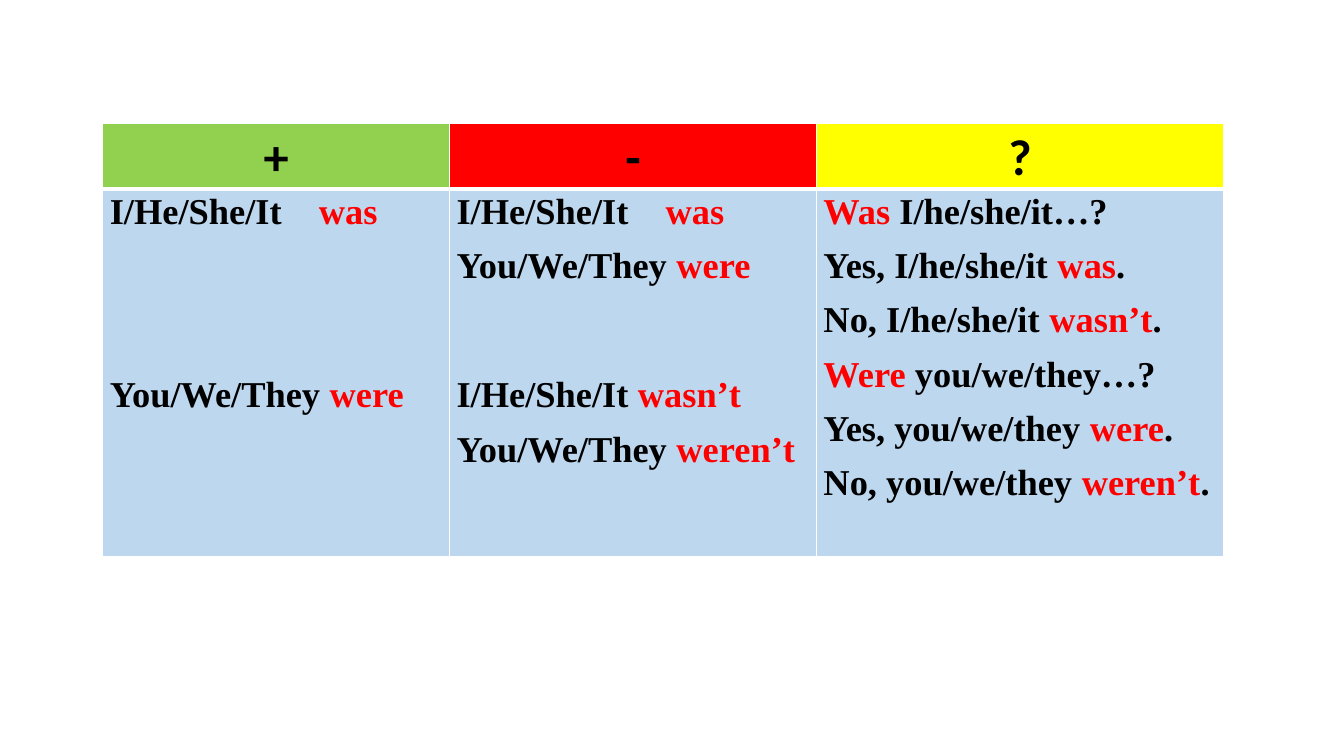
import dataclasses

import lxml.etree
import pptx
import pptx.dml.color
import pptx.enum.text
import pptx.oxml.ns
import pptx.util

WIDE = pptx.util.Inches(13.33)
HIGH = pptx.util.Inches(7.5)
LEFT, TOP = 7.65, 16.27
COLS = [25.8, 27.3, 30.3]
ROWS = [8.67, 48.67]
INK, RED, WHITE, BLUE = "000000", "FF0000", "FFFFFF", "BDD7EE"
TAB = 15.55
HEAD = {"name": "Calibri", "size": pptx.util.Pt(36), "bold": True}
BODY = {"name": "Times New Roman", "size": pptx.util.Pt(26), "bold": True}
INSET = {
    "margin_left": pptx.util.Inches(0.07),
    "margin_right": pptx.util.Inches(0.07),
    "margin_top": 0,
    "margin_bottom": 0,
}


@dataclasses.dataclass
class Line:
    text: str
    after: float = 8
    before: float = 0


@dataclasses.dataclass
class Column:
    sign: str
    fill: str
    lines: list[Line]


TENSES = [
    Column("+", "92D050", [
        Line("I/He/She/It\t*was*"),
        Line("You/We/They *were*", 0, 92.4),
    ]),
    Column("-", RED, [
        Line("I/He/She/It\t*was*"),
        Line("You/We/They *were*", 0),
        Line("I/He/She/It *wasn’t*", 8, 61.6),
        Line("You/We/They *weren’t*"),
    ]),
    Column("?", "FFFF00", [
        Line("*Was* I/he/she/it…?"),
        Line("Yes, I/he/she/it *was*."),
        Line("No, I/he/she/it *wasn’t*."),
        Line("*Were* you/we/they…?"),
        Line("Yes, you/we/they *were*."),
        Line("No, you/we/they *weren’t*."),
    ]),
]


def across(share: float) -> int:
    return round(WIDE * share / 100)


def down(share: float) -> int:
    return round(HIGH * share / 100)


def color(code: str) -> pptx.dml.color.RGBColor:
    return pptx.dml.color.RGBColor.from_string(code)


def apply(item: object, form: dict) -> None:
    for name, value in form.items():
        setattr(item, name, value)


def node(root: lxml.etree._Element, tag: str, **attrs: str) -> lxml.etree._Element:
    return lxml.etree.SubElement(root, pptx.oxml.ns.qn(tag), **attrs)


def paint(cell: object, fill: str, edges: dict[str, float]) -> None:
    apply(cell, INSET)
    props = cell._tc.get_or_add_tcPr()
    for side, width in edges.items():
        edge = node(props, f"a:ln{side}", w=str(pptx.util.Pt(width)))
        node(node(edge, "a:solidFill"), "a:srgbClr", val=WHITE)
    cell.fill.solid()
    cell.fill.fore_color.rgb = color(fill)


def write(cell: object, lines: list[Line], font: dict, align: object) -> None:
    frame = cell.text_frame
    for index, line in enumerate(lines):
        para = frame.add_paragraph() if index else frame.paragraphs[0]
        apply(para, {
            "alignment": align,
            "line_spacing": 1.07,
            "space_before": pptx.util.Pt(line.before),
            "space_after": pptx.util.Pt(line.after),
        })
        if "\t" in line.text:
            stops = node(para._p.get_or_add_pPr(), "a:tabLst")
            node(stops, "a:tab", pos=str(across(TAB)), algn="l")
        for part, text in enumerate(line.text.split("*")):
            if text:
                run = para.add_run()
                run.text = text
                apply(run.font, font)
                run.font.color.rgb = color(RED if part % 2 else INK)


def main() -> None:
    deck = pptx.Presentation()
    apply(deck, {"slide_width": WIDE, "slide_height": HIGH})
    slide = deck.slides.add_slide(deck.slide_layouts[6])
    table = slide.shapes.add_table(
        len(ROWS), len(COLS), across(LEFT), down(TOP),
        across(sum(COLS)), down(sum(ROWS)),
    ).table
    for row, share in zip(table.rows, ROWS):
        row.height = down(share)
    align = pptx.enum.text.PP_ALIGN
    for index, (tense, share) in enumerate(zip(TENSES, COLS)):
        table.columns[index].width = across(share)
        head, body = table.cell(0, index), table.cell(1, index)
        paint(head, tense.fill, {"L": 1, "R": 1, "T": 1, "B": 3})
        paint(body, BLUE, {"L": 1, "R": 1, "T": 3, "B": 1})
        write(head, [Line(tense.sign, 0)], HEAD, align.CENTER)
        write(body, tense.lines, BODY, align.LEFT)
    deck.save("out.pptx")


if __name__ == "__main__":
    main()
